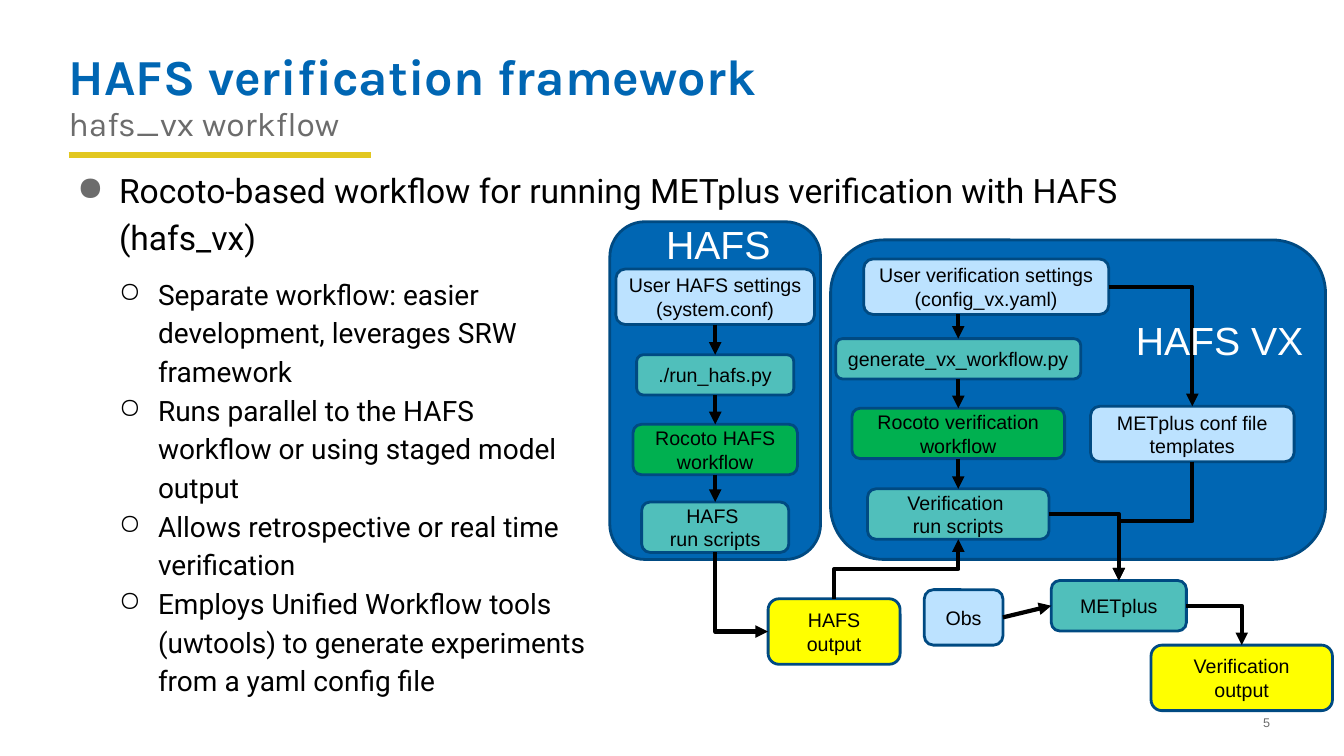
from lxml import etree
from pptx import Presentation
from pptx.dml.color import RGBColor as RGB
from pptx.enum.shapes import MSO_CONNECTOR as CONN, MSO_SHAPE as SHAPE
from pptx.enum.text import MSO_ANCHOR as ANCHOR, PP_ALIGN as ALIGN
from pptx.oxml.ns import qn
from pptx.util import Pt

# Content
COLORS = {
    "blue": "0066B3", "edge": "004A82", "gold": "E2C720", "gray": "6C6C6C",
    "black": "000000", "white": "FFFFFF", "settings": "BCE2FF",
    "script": "50BFBB", "rocoto": "00B050", "output": "FFFF00",
}
TITLE = "HAFS verification framework"
SUBTITLE = "hafs_vx workflow"
LEAD = ["Rocoto-based workflow for running METplus verification with HAFS (hafs_vx)"]
DETAILS = [
    "Separate workflow: easier development, leverages SRW framework",
    "Runs parallel to the HAFS workflow or using staged model output",
    "Allows retrospective or real time verification",
    "Employs Unified Workflow tools (uwtools) to generate experiments "
    "from a yaml config file",
]
PAGE = "5"

# Panels: left, top, width, height
PANELS = [(593.3, 171.4, 353.5, 228.2), (435.6, 158.4, 150.5, 241.2)]
PANEL_LABELS = [("HAFS VX", (804.2, 222.5, 135.4, 41)),
                ("HAFS", (468.7, 154.1, 90, 41))]

# Boxes: text, color, center x, top, width, height
HAFS_X, VX_X = 510.9, 684.5
BOXES = {
    "hafs_settings": ("User HAFS settings (system.conf)", "settings", HAFS_X, 192.2, 141.8, 39.6),
    "run_hafs": ("./run_hafs.py", "script", HAFS_X, 253.4, 112.3, 28.8),
    "hafs_rocoto": ("Rocoto HAFS workflow", "rocoto", HAFS_X, 303.1, 117.4, 36),
    "hafs_scripts": ("HAFS \vrun scripts", "script", HAFS_X, 358.6, 105.1, 36),
    "hafs_output": ("HAFS output", "output", 595.8, 427.7, 94.3, 46.8),
    "vx_settings": ("User verification settings (config_vx.yaml)", "settings", 704.5, 185, 175, 39.6),
    "generate": ("generate_vx_workflow.py", "script", VX_X, 241.9, 175, 28.8),
    "vx_rocoto": ("Rocoto verification workflow", "rocoto", VX_X, 291.6, 151.9, 36),
    "vx_scripts": ("Verification \vrun scripts", "script", VX_X, 349.2, 129.6, 36),
    "templates": ("METplus conf file templates", "settings", 851.7, 290.2, 145.4, 39.6),
    "obs": ("Obs", "settings", 688.3, 421.2, 56.2, 39.6),
    "metplus": ("METplus", "script", 799.2, 414.7, 96.5, 36),
    "vx_output": ("Verification output", "output", 887, 460.8, 129.6, 46.8),
}
CHAINS = [("hafs_settings", "run_hafs", "hafs_rocoto", "hafs_scripts"),
          ("vx_settings", "generate", "vx_rocoto", "vx_scripts")]
ELBOWS = [
    ("hafs_scripts", "bottom", "hafs_output", "left"),
    ("hafs_output", "top", "vx_scripts", "bottom"),
    ("vx_scripts", "right", "metplus", "top"),
    ("vx_settings", "right", "templates", "top"),
    ("templates", "bottom", "metplus", "top"),
    ("metplus", "right", "vx_output", "top"),
]
VERTICAL = ("top", "bottom")

prs = Presentation()
prs.slide_width, prs.slide_height = Pt(960), Pt(540)
s = prs.slides.add_slide(prs.slide_layouts[6])


def color(name):
    return RGB.from_string(COLORS[name])


def style(p, size, font, fill, bold=False):
    for r in p.runs:
        r.font.size, r.font.name, r.font.bold = Pt(size), font, bold
        r.font.color.rgb = color(fill)


def add_text(lines, at, size, font, fill, inset=(0, 0), spacing=None, bold=False,
             align=ALIGN.LEFT, anchor=ANCHOR.TOP, bullet=None):
    tf = s.shapes.add_textbox(*map(Pt, at)).text_frame
    tf.word_wrap, tf.vertical_anchor = True, anchor
    tf.margin_left = tf.margin_right = Pt(inset[0])
    tf.margin_top = tf.margin_bottom = Pt(inset[1])
    for i, line in enumerate(lines):
        p = tf.add_paragraph() if i else tf.paragraphs[0]
        p.text, p.alignment = line, align
        if bullet:
            char, shade, margin, hang = bullet
            pPr = p._p.get_or_add_pPr()
            pPr.set("marL", str(Pt(margin)))
            pPr.set("indent", str(Pt(-hang)))
            clr = etree.SubElement(pPr, qn("a:buClr"))
            etree.SubElement(clr, qn("a:srgbClr"), val=COLORS[shade])
            etree.SubElement(pPr, qn("a:buChar"), char=char)
        if spacing:
            p.line_spacing = spacing
        style(p, size, font, fill, bold)


def add_round(at, fill):
    sp = s.shapes.add_shape(SHAPE.ROUNDED_RECTANGLE, *map(Pt, at))
    sp.shadow.inherit = False
    sp.fill.solid()
    sp.fill.fore_color.rgb = color(fill)
    sp.line.color.rgb, sp.line.width = color("edge"), Pt(2)
    return sp


def add_line(kind, start, end, fill="black", width=3, arrow=True):
    cxn = s.shapes.add_connector(kind, *map(Pt, start + end))
    cxn.line.color.rgb, cxn.line.width = color(fill), Pt(width)
    if arrow:
        etree.SubElement(cxn.line._get_or_add_ln(), qn("a:tailEnd"), type="triangle")
    etree.SubElement(cxn._element.spPr, qn("a:effectLst"))
    return cxn


def side(name, edge):
    _, _, cx, top, w, h = BOXES[name]
    return {"top": (cx, top), "bottom": (cx, top + h),
            "left": (cx - w / 2, top + h / 2), "right": (cx + w / 2, top + h / 2)}[edge]


def add_elbow(source, out, target, into):
    (x1, y1), (x2, y2) = start, end = side(source, out), side(target, into)
    cxn = add_line(CONN.ELBOW, start, end)
    spPr = cxn._element.spPr
    if not (out in VERTICAL and into in VERTICAL):
        spPr.find(qn("a:prstGeom")).set("prst", "bentConnector2")
    if out in VERTICAL:  # turn the connector so that it leaves vertically
        w, h = abs(y2 - y1), abs(x2 - x1)
        cxn.left, cxn.top = Pt((x1 + x2 - w) / 2), Pt((y1 + y2 - h) / 2)
        cxn.width, cxn.height = Pt(w), Pt(h)
        xfrm = spPr.find(qn("a:xfrm"))
        xfrm.set("rot", str((90 if x2 < x1 else 270) * 60000))
        xfrm.set("flipH", "1" if x2 > x1 and y2 > y1 else "0")
        xfrm.set("flipV", "0")


# Heading and lead
add_line(CONN.STRAIGHT, (49, 110.9), (265, 110.9), "gold", 4, arrow=False)
add_text([TITLE], (49, 36.7, 858.2, 40.3), 36, "Karla", "blue",
         spacing=0.9, bold=True, anchor=ANCHOR.MIDDLE)
add_text([SUBTITLE], (49, 77, 580.3, 27.4), 24, "Karla", "gray", spacing=0.9)
add_text(LEAD, (49, 117.4, 843.1, 77), 24, "Roboto", "black", spacing=1.15,
         bullet=("●", "gray", 36, 30))

# Panels and boxes
for panel in PANELS:
    add_round(panel, "blue")
for text, fill, cx, top, w, h in BOXES.values():
    tf = add_round((cx - w / 2, top, w, h), fill).text_frame
    tf.word_wrap, tf.vertical_anchor = True, ANCHOR.MIDDLE
    p = tf.paragraphs[0]
    p.text, p.alignment = text, ALIGN.CENTER
    style(p, 14, "Arial", "black")

# Arrows
for chain in CHAINS:
    for upper, lower in zip(chain, chain[1:]):
        x, y = side(lower, "top")
        add_line(CONN.STRAIGHT, (x, side(upper, "bottom")[1]), (x, y))
add_line(CONN.STRAIGHT, side("obs", "right"), side("metplus", "left"))
for elbow in ELBOWS:
    add_elbow(*elbow)

# Panel labels, details and page number
for label, at in PANEL_LABELS:
    add_text([label], at, 28, "Arial", "white", inset=(7.2, 3.6))
add_text(DETAILS, (33.8, 187.2, 395.3, 317.5), 20, "Roboto", "black", inset=(7.2, 7.2),
         spacing=1.15, bullet=("○", "black", 72, 28))
add_text([PAGE], (691.2, 510.5, 216, 18), 9, "Arial", "gray", align=ALIGN.RIGHT)

prs.save("out.pptx")
